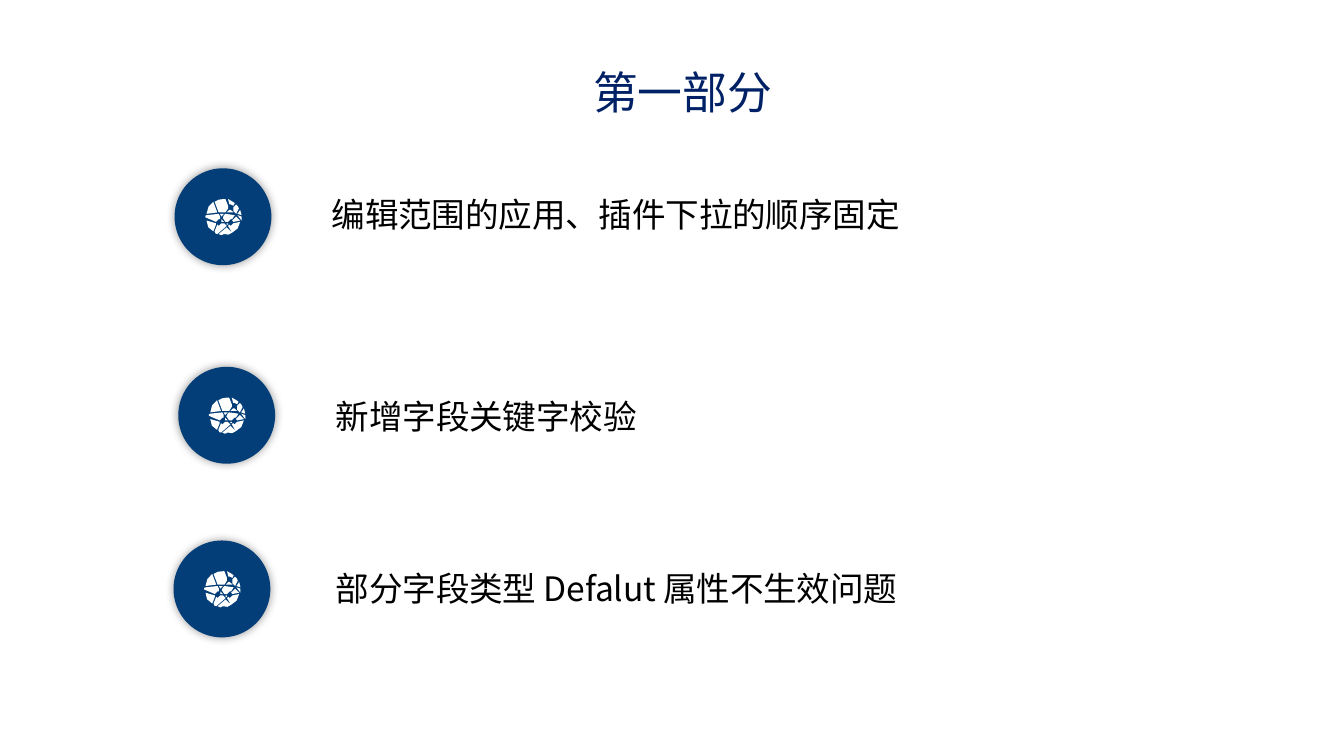
from math import hypot

from lxml import etree
from pptx import Presentation
from pptx.dml.color import RGBColor
from pptx.enum.shapes import MSO_SHAPE
from pptx.enum.text import PP_ALIGN
from pptx.oxml.ns import qn
from pptx.util import Cm, Pt

OVAL = MSO_SHAPE.OVAL
LEFT, CENTER = PP_ALIGN.LEFT, PP_ALIGN.CENTER

NAVY = RGBColor(0x00, 0x21, 0x66)
BLUE = RGBColor(0x03, 0x3E, 0x78)
BLACK = RGBColor(0x00, 0x00, 0x00)
WHITE = RGBColor(0xFF, 0xFF, 0xFF)

DISC = 1.83
INSET = 0.58
UNIT = Cm(2.54) / 1000
FINE = 10
RADIUS = 13.5

# White patches of the globe, on a grid of 27 by 27
PATCHES = [
    [(16, 21), (17, 22), (20, 25), (14, 26), (10, 26)],
    [(16, 18), (17, 18), (17, 19), (16, 19)],
    [(12, 18), (14, 18), (16, 20), (9, 26), (7, 24), (9, 19), (10, 20)],
    [(26, 17), (20, 25), (17, 20), (18, 19), (19, 20), (21, 18)],
    [(1, 16), (8, 18), (8, 19), (6, 24)],
    [(12, 15), (14, 17), (12, 17), (12, 16)],
    [(23, 13), (26, 16), (21, 17), (20, 16)],
    [(24, 12), (27, 13), (27, 16)],
    [(10, 11), (11, 13), (11, 15), (10, 15), (8, 17), (1, 14), (0, 13),
     (1, 12)],
    [(15, 11), (22, 12), (20, 15), (19, 15), (17, 17), (15, 17), (13, 14),
     (14, 12)],
    [(14, 11), (13, 12), (12, 13), (11, 11)],
    [(18, 8), (19, 8), (20, 9), (21, 10), (16, 10)],
    [(26, 8), (27, 12), (24, 11)],
    [(23, 4), (25, 7), (23, 11), (21, 9), (21, 8), (21, 6)],
    [(6, 2), (9, 10), (1, 11)],
    [(17, 0), (22, 3), (21, 5), (19, 4), (18, 4)],
    [(14, 0), (15, 0), (17, 5), (17, 7), (15, 10), (10, 10), (7, 2)],
]

# Disc left and top, then text box and margins, all in cm
ROWS = [
    ("编辑范围的应用、插件下拉的顺序固定",
     (3.3, 3.18), (6.27, 3.66, 17.22, 0.76), (0, 0)),
    ("新增字段关键字校验",
     (3.37, 6.93), (6.1, 7.34, 15.14, 1.02), (0.25, 0.13)),
    ("部分字段类型 Defalut 属性不生效问题",
     (3.28, 10.21), (6.1, 10.59, 18.39, 1.02), (0.25, 0.13)),
]


def bend(patch):
    """Round off each edge of a patch that runs along the globe's rim."""
    points = []
    for (ax, ay), (bx, by) in zip(patch, patch[1:] + patch[:1]):
        points.append((ax, ay))
        rim = min(hypot(ax - RADIUS, ay - RADIUS),
                  hypot(bx - RADIUS, by - RADIUS))
        if rim > 12.2:
            dx, dy = (ax + bx) / 2 - RADIUS, (ay + by) / 2 - RADIUS
            grow = RADIUS / hypot(dx, dy)
            points.append((RADIUS + dx * grow, RADIUS + dy * grow))
    return [(x * FINE, y * FINE) for x, y in points]


class Deck:
    font = "Noto Sans CJK SC"

    def __init__(self):
        self.file = Presentation()
        self.file.slide_width, self.file.slide_height = Cm(25.4), Cm(14.28)
        self.slide = self.file.slides.add_slide(self.file.slide_layouts[6])

    def text(self, words, box, pads, size, color, align=LEFT, track=0):
        frame = self.slide.shapes.add_textbox(*map(Cm, box)).text_frame
        frame.word_wrap = True
        frame.margin_left = frame.margin_right = Cm(pads[0])
        frame.margin_top = frame.margin_bottom = Cm(pads[1])
        frame.text = words
        line = frame.paragraphs[0]
        line.alignment = align
        font = line.runs[0].font
        font.name, font.size, font.color.rgb = self.font, Pt(size), color
        props = line.runs[0]._r.get_or_add_rPr()
        etree.SubElement(props, qn("a:ea"), typeface=self.font)
        if track:
            props.set("spc", str(track))

    def paint(self, shape, color):
        shape.shadow.inherit = False
        shape.fill.solid()
        shape.fill.fore_color.rgb = color
        shape.line.fill.background()

    def glow(self, shape):
        """Add a soft shadow all round the shape."""
        effects = shape._element.spPr.find(qn("a:effectLst"))
        shade = etree.SubElement(effects, qn("a:outerShdw"),
                                 blurRad=str(Pt(5)), dist="0", dir="0",
                                 algn="ctr", rotWithShape="0")
        tint = etree.SubElement(shade, qn("a:srgbClr"), val=str(BLACK))
        etree.SubElement(tint, qn("a:alpha"), val="40000")

    def globe(self, left, top):
        parts = self.slide.shapes.add_group_shape().shapes
        disc = parts.add_shape(OVAL, Cm(left), Cm(top), Cm(DISC), Cm(DISC))
        self.paint(disc, BLUE)
        self.glow(disc)
        first, *rest = map(bend, PATCHES)
        pen = parts.build_freeform(*first[0], scale=UNIT)
        pen.add_line_segments(first[1:])
        for patch in rest:
            pen.move_to(*patch[0])
            pen.add_line_segments(patch[1:])
        icon = pen.convert_to_shape(Cm(left + INSET), Cm(top + INSET))
        self.paint(icon, WHITE)


def main():
    deck = Deck()
    deck.text("第一部分", (8.31, 1.14, 9.19, 1.17), (0.15, 0.08), 24, NAVY,
              CENTER)
    for words, spot, box, pads in ROWS:
        deck.globe(*spot)
        deck.text(words, box, pads, 18, BLACK, track=-10)
    deck.file.save("out.pptx")


if __name__ == "__main__":
    main()
